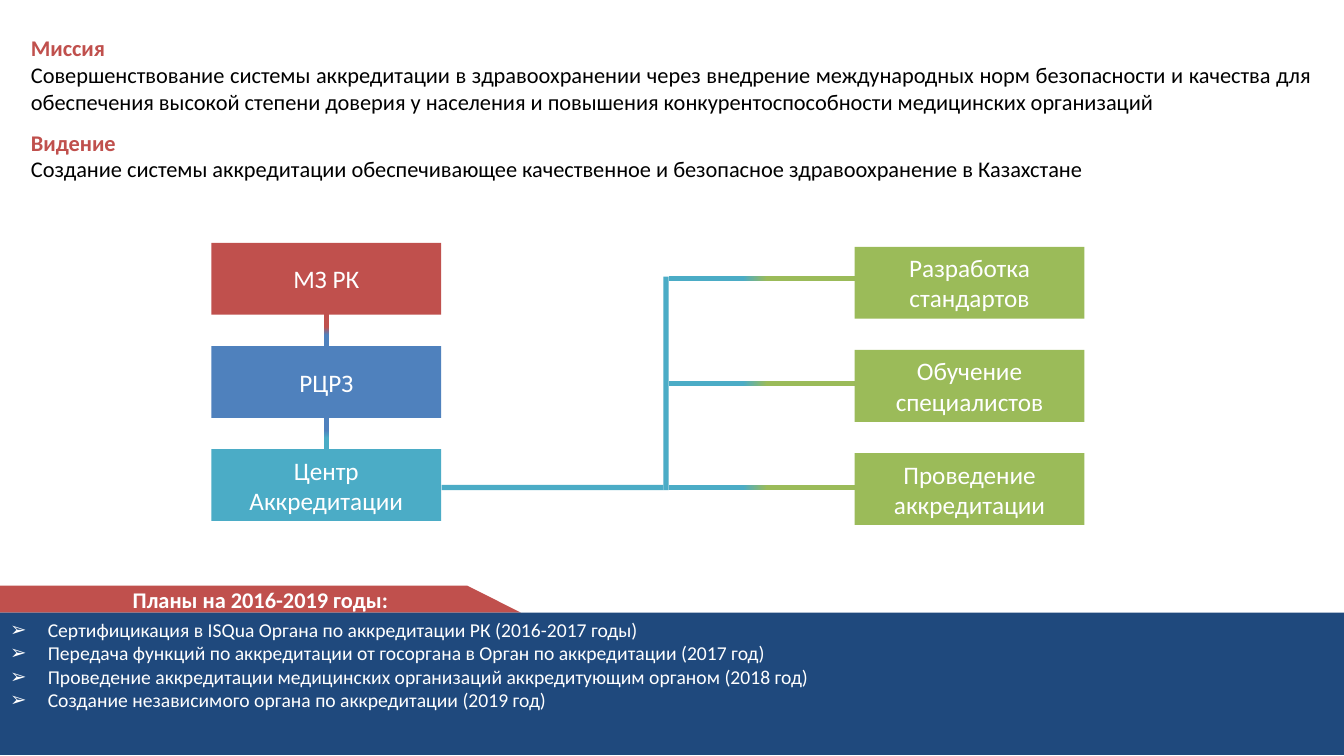
from dataclasses import dataclass

from lxml import etree
from pptx import Presentation
from pptx.dml.color import RGBColor
from pptx.enum.shapes import MSO_SHAPE
from pptx.enum.text import MSO_ANCHOR, MSO_AUTO_SIZE, PP_ALIGN
from pptx.oxml.ns import qn
from pptx.util import Cm, Pt

RECT = MSO_SHAPE.RECTANGLE
TOP, MIDDLE = MSO_ANCHOR.TOP, MSO_ANCHOR.MIDDLE
LEFT, CENTER, JUSTIFY = PP_ALIGN.LEFT, PP_ALIGN.CENTER, PP_ALIGN.JUSTIFY
FIXED = MSO_AUTO_SIZE.NONE


@dataclass(frozen=True)
class Theme:
    font: str = "Calibri"
    red: str = "C0504D"
    blue: str = "4F81BD"
    teal: str = "4BACC6"
    green: str = "9BBB59"
    navy: str = "1F497D"
    white: str = "FFFFFF"
    black: str = "000000"
    box: int = 18
    text: int = 16
    list: int = 14


def apply(item, **values):
    for name, value in values.items():
        setattr(item, name, value)


class Page:
    def __init__(self, slide, theme):
        self.slide = slide
        self.theme = theme

    def paint(self, shape, color):
        shape.fill.solid()
        shape.fill.fore_color.rgb = RGBColor.from_string(color)

    def place(self, shape, area):
        names = ("left", "top", "width", "height")
        apply(shape, **{name: Cm(size) for name, size in zip(names, area)})

    def label(self, shape, lines, anchor=MIDDLE, bullet=None):
        """Each line is (text, size, color, bold, alignment)."""
        frame = shape.text_frame
        apply(frame, word_wrap=True, auto_size=FIXED, vertical_anchor=anchor)
        for index, (text, size, color, bold, align) in enumerate(lines):
            para = frame.add_paragraph() if index else frame.paragraphs[0]
            para.text = text
            if bullet:
                props = para._p.get_or_add_pPr()
                props.set("marL", str(Cm(0.95)))
                props.set("indent", str(-Cm(0.95)))
                etree.SubElement(props, qn("a:buChar")).set("char", bullet)
            apply(para, alignment=align, line_spacing=1.0,
                  space_before=Pt(0), space_after=Pt(0))
            apply(para.font, name=self.theme.font, size=Pt(size), bold=bold)
            para.font.color.rgb = RGBColor.from_string(color)

    def rect(self, area, color):
        shape = self.slide.shapes.add_shape(RECT, *map(Cm, area))
        shape.shadow.inherit = False
        shape.line.fill.background()
        self.paint(shape, color)
        return shape

    def box(self, area, color, text):
        style = self.theme
        self.label(self.rect(area, color),
                   [(text, style.box, style.white, False, CENTER)])

    def blend(self, area, stops, angle):
        fill = self.rect(area, self.theme.white).fill
        fill.gradient()
        fill.gradient_angle = angle
        for stop, (spot, color) in zip(fill.gradient_stops, stops):
            stop.position = spot
            stop.color.rgb = RGBColor.from_string(color)

    def note(self, area, head, text):
        style = self.theme
        shape = self.slide.shapes.add_textbox(*map(Cm, area))
        self.label(shape, [(head, style.text, style.red, True, LEFT),
                           (text, style.text, style.black, False, JUSTIFY)], TOP)

    def banner(self, area, slope, text):
        style = self.theme
        left, top, width, height = area
        right, base = left + width, top + height
        pen = self.slide.shapes.build_freeform(Cm(left), Cm(top))
        pen.add_line_segments([(Cm(right - slope), Cm(top)), (Cm(right), Cm(base)),
                               (Cm(left), Cm(base))])
        shape = pen.convert_to_shape()
        shape.shadow.inherit = False
        shape.line.fill.background()
        self.paint(shape, style.red)
        title = self.slide.shapes.title
        title._element.addprevious(shape._element)
        self.place(title, area)
        apply(title.text_frame, margin_top=0, margin_bottom=0)
        self.label(title, [(text, style.text, style.white, True, CENTER)])

    def plans(self, area, items):
        style = self.theme
        body = self.slide.placeholders[1]
        self.place(body, area)
        self.paint(body, style.navy)
        self.label(body, [(item, style.list, style.white, False, JUSTIFY)
                          for item in items], TOP, "➢")


def main():
    deck = Presentation()
    apply(deck, slide_width=Cm(33.87), slide_height=Cm(19.05))
    theme = Theme()
    page = Page(deck.slides.add_slide(deck.slide_layouts[1]), theme)

    # Mission and vision
    page.note((0.53, 0.74, 32.79, 2.31), "Миссия",
              "Совершенствование системы аккредитации в здравоохранении через "
              "внедрение международных норм безопасности и качества для обеспечения "
              "высокой степени доверия у населения и повышения "
              "конкурентоспособности медицинских организаций")
    page.note((0.53, 3.12, 32.79, 1.63), "Видение",
              "Создание системы аккредитации обеспечивающее качественное и "
              "безопасное здравоохранение в Казахстане")

    # Chain of bodies, with the links behind the boxes
    wide, high, step, thin = 5.79, 1.81, 2.6, 0.13
    chain = [("МЗ РК", theme.red), ("РЦРЗ", theme.blue),
             ("Центр Аккредитации", theme.teal)]
    for row, (upper, lower) in enumerate(zip(chain, chain[1:])):
        page.blend((8.16, 7.91 + row * step, thin, 0.92),
                   [(0.36, upper[1]), (0.58, lower[1])], 270)
    for row, (text, color) in enumerate(chain):
        page.box((5.33, 6.12 + row * step, wide, high), color, text)

    # Tasks and the branches that lead to them
    page.rect((11.13, 12.22, 5.59, thin), theme.teal)
    page.rect((16.72, 6.97, thin, 5.38), theme.teal)
    tasks = ["Разработка стандартов", "Обучение специалистов",
             "Проведение аккредитации"]
    for row, text in enumerate(tasks):
        page.box((21.54, 6.22 + row * step, wide, high), theme.green, text)
        page.blend((16.85, 6.96 + row * 2.63, 4.69, thin),
                   [(0.4, theme.teal), (0.53, theme.green)], 0)

    # Plans
    page.banner((0, 14.76, 13.13, 0.68), 1.35, "Планы на 2016-2019 годы:")
    page.plans((0, 15.44, 33.87, 3.58), [
        "Сертифицикация в ISQua Органа по аккредитации РК (2016-2017 годы)",
        "Передача функций по аккредитации от госоргана в Орган по аккредитации (2017 год)",
        "Проведение аккредитации медицинских организаций аккредитующим органом (2018 год)",
        "Создание независимого органа по аккредитации (2019 год)",
    ])
    deck.save("out.pptx")


if __name__ == "__main__":
    main()
